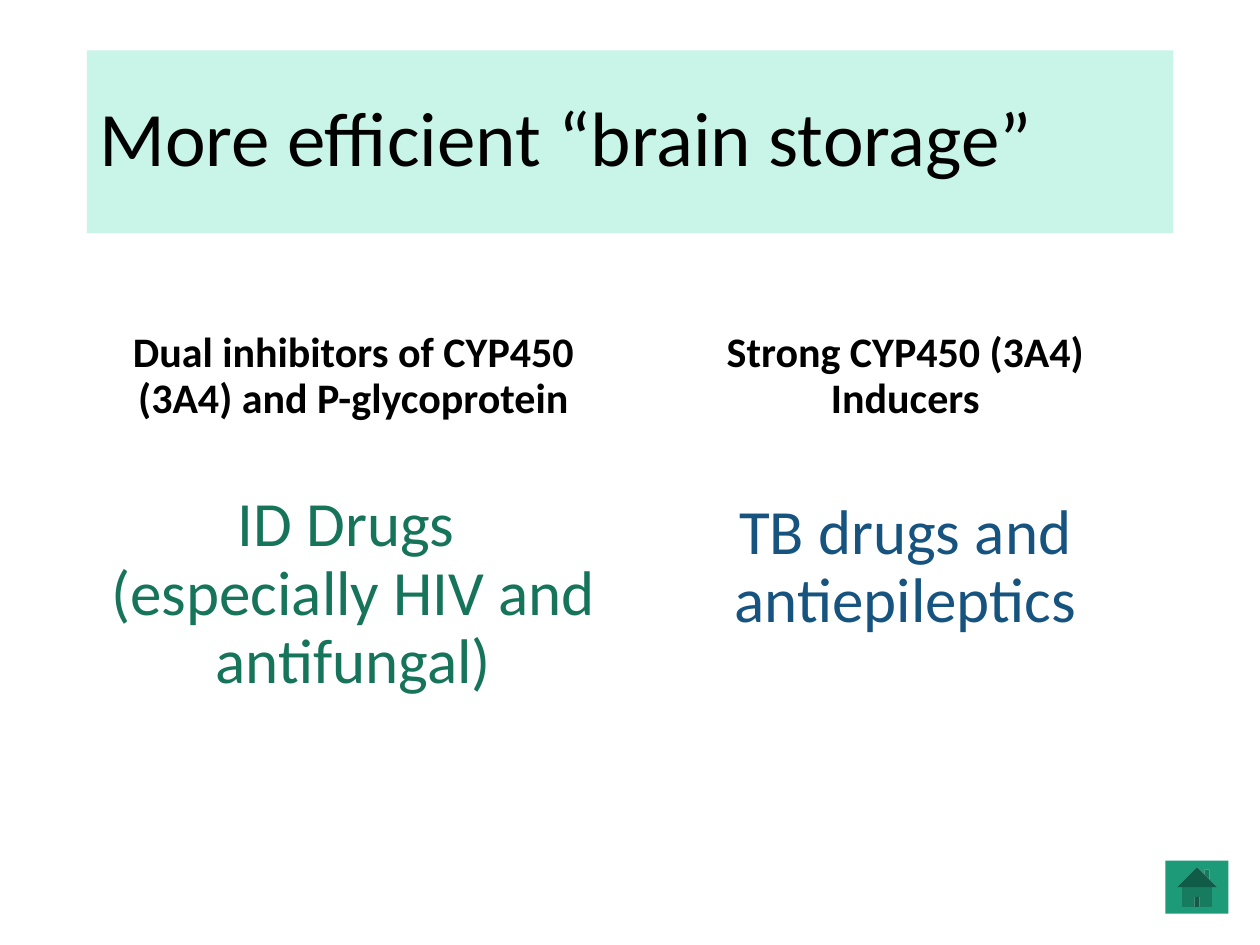
from pptx import Presentation
from pptx.dml.color import RGBColor
from pptx.enum.shapes import MSO_SHAPE as Shape
from pptx.enum.text import MSO_ANCHOR as Anchor, PP_ALIGN as Align
from pptx.util import Inches, Pt

COLORS = {
    "banner": "C8F5E8",
    "text": "000000",
    "inhibitors": "16745A",
    "inducers": "16537F",
    "home": "1D9A78",
}

prs = Presentation()
prs.slide_width, prs.slide_height = Inches(10), Inches(7.5)
slide = prs.slides.add_slide(prs.slide_layouts[6])


def add_block(shape_type, left, top, width, height, color):
    block = slide.shapes.add_shape(
        shape_type, Inches(left), Inches(top), Inches(width), Inches(height))
    block.shadow.inherit = False
    block.fill.solid()
    block.fill.fore_color.rgb = RGBColor.from_string(COLORS[color])
    block.line.fill.background()
    return block


def write(frame, text, size, color, align=Align.CENTER, anchor=Anchor.TOP, bold=False):
    frame.word_wrap = True
    frame.vertical_anchor = anchor
    frame.text = text
    for paragraph in frame.paragraphs:
        paragraph.alignment = align
        paragraph.line_spacing = 0.9
        for run in paragraph.runs:
            run.font.name = "Calibri"
            run.font.size = Pt(size)
            run.font.bold = bold
            run.font.color.rgb = RGBColor.from_string(COLORS[color])


# Title banner
banner = add_block(Shape.RECTANGLE, 0.69, 0.4, 8.62, 1.45, "banner")
write(banner.text_frame, "More efficient “brain storage”", 44, "text",
      align=Align.LEFT, anchor=Anchor.MIDDLE)

# Two columns: bold heading above a coloured drug group
columns = [
    (0.69, 4.23, "Dual inhibitors of CYP450 (3A4) and P-glycoprotein",
     3.86, "ID Drugs \n(especially HIV and antifungal)", "inhibitors"),
    (5.06, 4.25, "Strong CYP450 (3A4) Inducers",
     3.92, "TB drugs and antiepileptics", "inducers"),
]
for left, width, heading, drugs_top, drugs, color in columns:
    heading_box = slide.shapes.add_textbox(
        Inches(left), Inches(2.5), Inches(width), Inches(0.9))
    write(heading_box.text_frame, heading, 24, "text", anchor=Anchor.BOTTOM, bold=True)
    drugs_box = slide.shapes.add_textbox(
        Inches(left), Inches(drugs_top), Inches(width), Inches(2.85))
    write(drugs_box.text_frame, drugs, 36, color)

# Home button
add_block(Shape.ACTION_BUTTON_HOME, 9.25, 6.83, 0.5, 0.42, "home")

prs.save("out.pptx")
